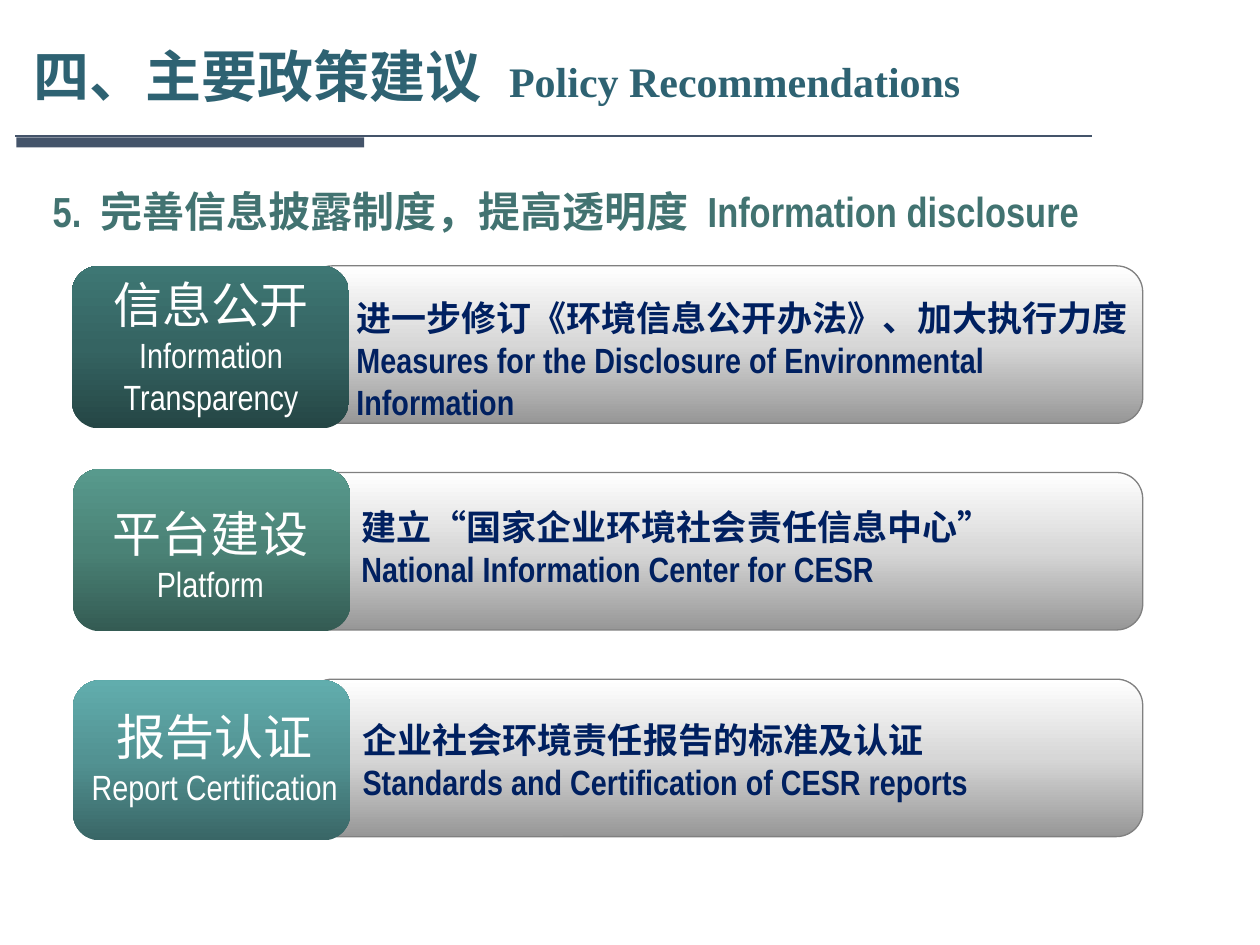
from copy import deepcopy

from pptx import Presentation
from pptx.dml.color import RGBColor
from pptx.enum import shapes, text
from pptx.oxml import parse_xml
from pptx.oxml.ns import nsdecls
from pptx.util import Inches, Pt

FONT = "Arial Narrow"
SLATE = "44546A"
PANEL_GRADIENT = ("979797", "D7D7D7", "FFFFFF")


def color(hex_string):
    return RGBColor.from_string(hex_string)


def add_text(slide, box, paragraphs, *, hue, font=FONT, bold=False, align=None,
             anchor=text.MSO_ANCHOR.TOP, line_spacing=None, hanging=0):
    """Each paragraph is a list of runs: (words, size) or (words, size, letter spacing)."""
    frame = slide.shapes.add_textbox(*map(Inches, box)).text_frame
    frame.word_wrap = True
    frame.vertical_anchor = anchor
    for index, runs in enumerate(paragraphs):
        paragraph = frame.add_paragraph() if index else frame.paragraphs[0]
        paragraph.alignment = align
        paragraph.line_spacing = line_spacing
        if hanging:
            properties = paragraph._p.get_or_add_pPr()
            properties.set("marL", str(Inches(hanging)))
            properties.set("indent", str(-Inches(hanging)))
        for words, size, *spacing in runs:
            run = paragraph.add_run()
            run.text = words
            run.font.name = font
            run.font.size = Pt(size)
            run.font.bold = bold
            run.font.color.rgb = color(hue)
            if spacing:
                run._r.get_or_add_rPr().set("spc", str(int(spacing[0] * 100)))


def add_gradient_card(slide, box, hues, outline=None):
    """Rounded card whose colours run evenly from bottom to top."""
    card = slide.shapes.add_shape(shapes.MSO_SHAPE.ROUNDED_RECTANGLE, *map(Inches, box))
    card.shadow.inherit = False
    card.fill.gradient()
    card.fill.gradient_angle = 90
    stops = card.fill.gradient_stops
    first = stops[0]._gs
    first.addnext(deepcopy(first))
    for index, (stop, hue) in enumerate(zip(card.fill.gradient_stops, hues)):
        stop.color.rgb = color(hue)
        stop.position = index / (len(hues) - 1)
    if outline:
        card.line.color.rgb = color(outline)
        card.line.width = Pt(0.75)
    else:
        card.line.fill.background()


def add_header(slide, left, top, width, height):
    rule_y = top + height - 0.09
    rule = slide.shapes.add_connector(
        shapes.MSO_CONNECTOR.STRAIGHT, Inches(left - 0.05), Inches(rule_y),
        Inches(left + width - 0.12), Inches(rule_y))
    rule.line.color.rgb = color(SLATE)
    rule.line.width = Pt(1.5)
    rule._element.spPr.append(parse_xml(f"<a:effectLst {nsdecls('a')}/>"))

    accent = slide.shapes.add_shape(
        shapes.MSO_SHAPE.RECTANGLE, Inches(left - 0.04), Inches(rule_y + 0.01),
        Inches(2.76), Inches(0.08))
    accent.shadow.inherit = False
    accent.fill.solid()
    accent.fill.fore_color.rgb = color(SLATE)
    accent.line.fill.background()

    add_text(slide, (left, top, width, height),
             [[("四、主要政策建议", 32), (" ", 32, 8), ("Policy Recommendations", 24)]],
             hue="2E6272", font="Times New Roman", bold=True,
             anchor=text.MSO_ANCHOR.MIDDLE, line_spacing=0.9)


def add_heading(slide, box):
    gap = (" ", 24, 5.5)
    add_text(slide, box,
             [[("5.", 24), gap, ("完善信息披露制度，提高透明度", 24), gap,
               ("Information disclosure", 24)]],
             hue="427371", bold=True, align=text.PP_ALIGN.JUSTIFY,
             line_spacing=1.4, hanging=0.38)


def add_recommendation(slide, panel_top, tab_box, hues, label_box, label,
                       detail_box, detail):
    add_gradient_card(slide, (2.43, panel_top, 6.64, 1.25), PANEL_GRADIENT, "808080")
    add_gradient_card(slide, tab_box, hues)
    chinese, english = label
    add_text(slide, label_box, [[(chinese, 28)], [(english, 20)]],
             hue="FFFFFF", align=text.PP_ALIGN.CENTER)
    add_text(slide, detail_box, [[(line, 20)] for line in detail],
             hue="002060", bold=True)


RECOMMENDATIONS = [
    dict(tab_box=(0.57, 2.11, 2.2, 1.29), hues=("254645", "356462", "3E7774"),
         label_box=(0.44, 2.13, 2.47, 1.25),
         label=("信息公开", "Information Transparency"),
         detail_box=(2.73, 2.3, 6.38, 1.11),
         detail=("进一步修订《环境信息公开办法》、加大执行力度",
                 "Measures for the Disclosure of Environmental Information")),
    dict(tab_box=(0.58, 3.72, 2.2, 1.29), hues=("345B53", "4A8276", "589A8D"),
         label_box=(0.73, 3.95, 1.88, 0.91),
         label=("平台建设", "Platform"),
         detail_box=(2.77, 3.96, 6.38, 0.77),
         detail=("建立“国家企业环境社会责任信息中心”",
                 "National Information Center for CESR")),
    dict(tab_box=(0.58, 5.4, 2.2, 1.27), hues=("396666", "529292", "61ADAD"),
         label_box=(0.17, 5.56, 3.07, 0.91),
         label=("报告认证", "Report Certification"),
         detail_box=(2.78, 5.65, 5.86, 0.77),
         detail=("企业社会环境责任报告的标准及认证",
                 "Standards and Certification of CESR reports")),
]


def main():
    deck = Presentation()
    deck.slide_width, deck.slide_height = Inches(10), Inches(7.5)
    slide = deck.slides.add_slide(deck.slide_layouts[6])
    add_header(slide, 0.17, 0.09, 8.62, 1.08)
    add_heading(slide, (0.32, 1.26, 9.37, 0.69))
    for index, recommendation in enumerate(RECOMMENDATIONS):
        add_recommendation(slide, 2.11 + 1.64 * index, **recommendation)
    deck.save("out.pptx")


if __name__ == "__main__":
    main()
